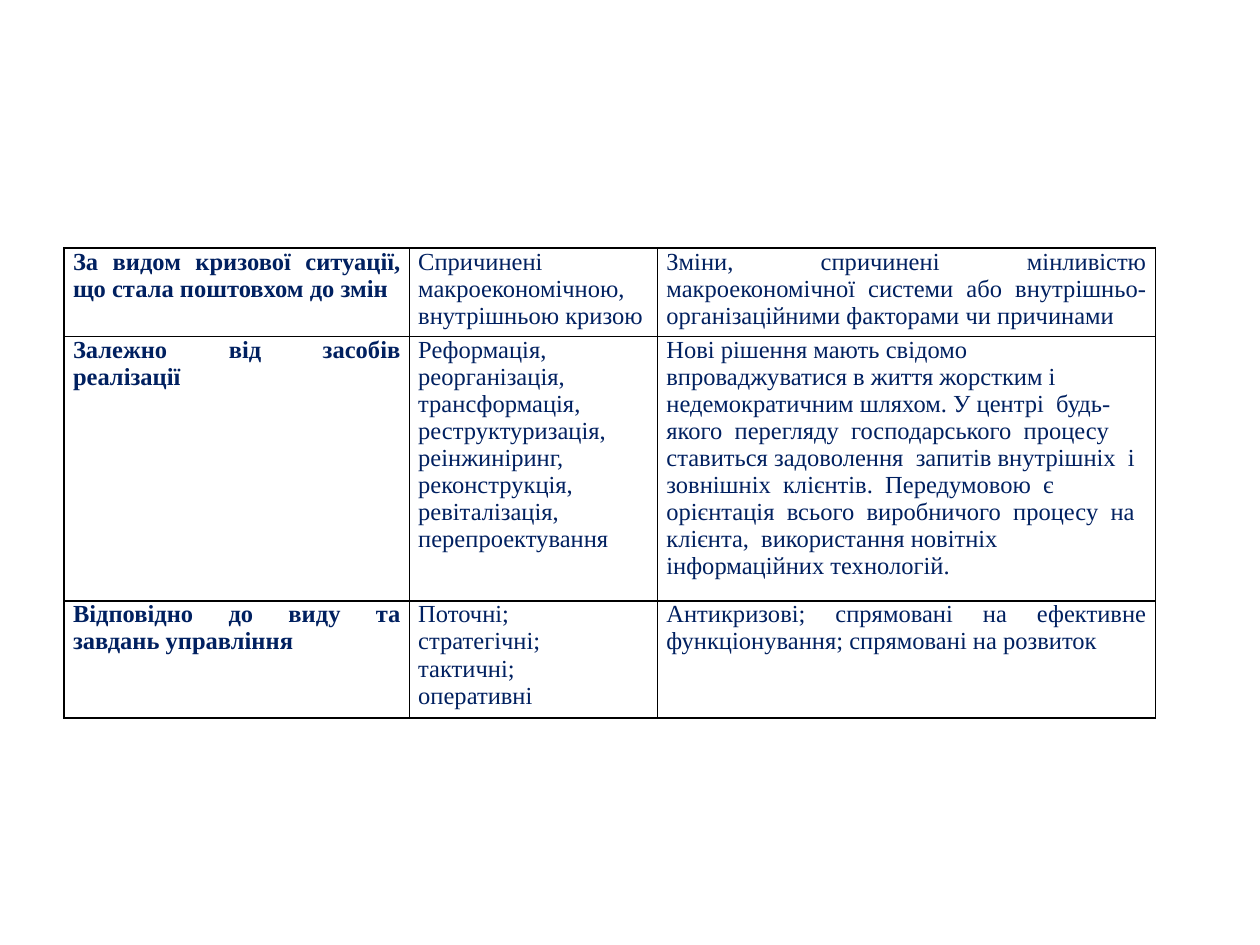
import pptx
import pptx.dml.color
import pptx.enum.text
import pptx.oxml
import pptx.util
from pptx.util import Inches

COLORS = {"text": "002060", "cell": "FFFFFF", "border": "000000"}
COLUMN_WIDTHS = [2.74, 1.97, 3.95]
ROW_HEIGHTS = [0.7, 2.1, 0.93]
JUSTIFY = pptx.enum.text.PP_ALIGN.JUSTIFY
LEFT = pptx.enum.text.PP_ALIGN.LEFT

# Each row: basis of classification, types of change, description and its alignment
changes = [
    ("За видом кризової ситуації, що стала поштовхом до змін",
     "Спричинені макроекономічною, внутрішньою кризою",
     "Зміни, спричинені мінливістю макроекономічної системи або "
     "внутрішньо-організаційними факторами чи причинами", JUSTIFY),
    ("Залежно від засобів реалізації",
     "Реформація, реорганізація, трансформація, реструктуризація, "
     "реінжиніринг, реконструкція, ревіталізація, перепроектування",
     "Нові рішення мають свідомо впроваджуватися в життя жорстким і "
     "недемократичним шляхом. У центрі  будь-якого  перегляду  "
     "господарського  процесу  ставиться задоволення  запитів внутрішніх  "
     "і зовнішніх  клієнтів.  Передумовою  є орієнтація  всього  "
     "виробничого  процесу  на  клієнта,  використання новітніх "
     "інформаційних технологій.", LEFT),
    ("Відповідно до виду та завдань управління ",
     "Поточні;\nстратегічні;\nтактичні;\nоперативні",
     "Антикризові; спрямовані на ефективне функціонування; "
     "спрямовані на розвиток", JUSTIFY),
]


def add_borders(cell):
    properties = cell._tc.get_or_add_tcPr()
    for position, side in enumerate(("lnL", "lnR", "lnT", "lnB")):
        properties.insert(position, pptx.oxml.parse_xml(
            f'<a:{side} xmlns:a="http://schemas.openxmlformats.org/drawingml/2006/main" '
            f'w="{pptx.util.Pt(1)}"><a:solidFill><a:srgbClr val="{COLORS["border"]}"/>'
            f'</a:solidFill></a:{side}>'))


deck = pptx.Presentation()
deck.slide_width, deck.slide_height = Inches(10), Inches(7.5)
slide = deck.slides.add_slide(deck.slide_layouts[6])

classification = slide.shapes.add_table(
    len(ROW_HEIGHTS), len(COLUMN_WIDTHS), Inches(0.51), Inches(1.97),
    Inches(sum(COLUMN_WIDTHS)), Inches(sum(ROW_HEIGHTS))).table
classification.first_row = False
classification.horz_banding = False
for column, width in zip(classification.columns, COLUMN_WIDTHS):
    column.width = Inches(width)
for row, height in zip(classification.rows, ROW_HEIGHTS):
    row.height = Inches(height)

for row, (basis, kinds, description, description_alignment) in zip(classification.rows, changes):
    contents = [(basis, JUSTIFY, True), (kinds, LEFT, False),
                (description, description_alignment, False)]
    for cell, (wording, alignment, bold) in zip(row.cells, contents):
        cell.text = wording
        cell.margin_left = cell.margin_right = Inches(0.07)
        cell.margin_top = cell.margin_bottom = 0
        cell.fill.solid()
        cell.fill.fore_color.rgb = pptx.dml.color.RGBColor.from_string(COLORS["cell"])
        add_borders(cell)
        for paragraph in cell.text_frame.paragraphs:
            paragraph.alignment = alignment
            paragraph.font.name = "Times New Roman"
            paragraph.font.size = pptx.util.Pt(14)
            paragraph.font.bold = bold
            paragraph.font.color.rgb = pptx.dml.color.RGBColor.from_string(COLORS["text"])

deck.save("out.pptx")
